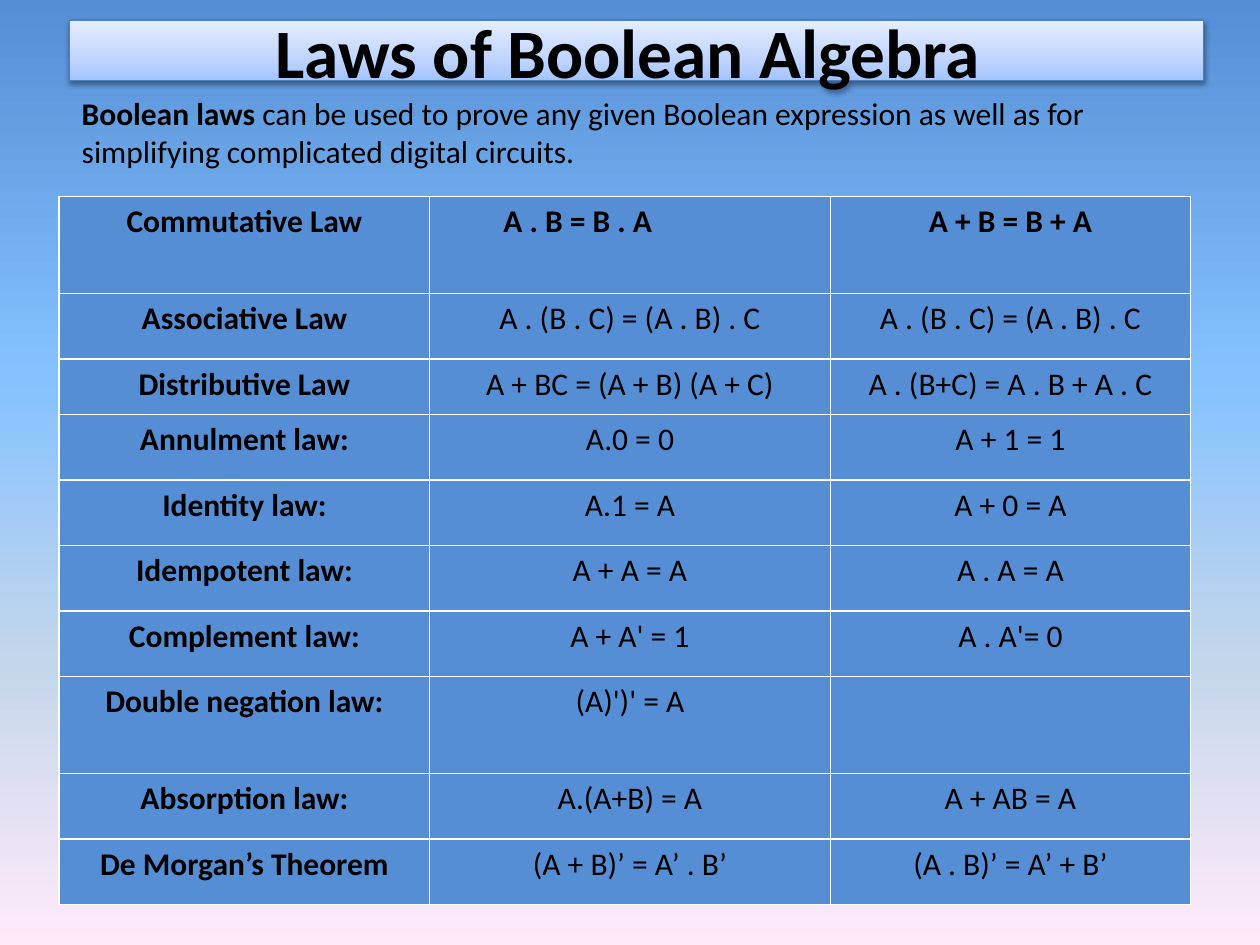
"""Build a slide that tabulates the laws of Boolean algebra."""
from typing import NamedTuple

from lxml.etree import SubElement
from pptx import Presentation
from pptx.dml.color import RGBColor
from pptx.enum.text import MSO_ANCHOR, MSO_AUTO_SIZE, PP_ALIGN
from pptx.oxml.ns import qn
from pptx.util import Inches, Pt

COLORS = {
    "ink": "000000",
    "cell": "558ED5",
    "title_line": "4B7EBC",
}
SKY = [(0, "558ED5"), (40, "85C2FF"), (70, "C4D6EB"), (100, "FFEBFA")]
TITLE_BAND = [(0, "A4C4FF"), (35, "BFD4FF"), (100, "E6EEFF")]
FONT = "Calibri"


class Law(NamedTuple):
    name: str
    first_form: str
    second_form: str
    height: float = 0.52


LAWS = [
    Law("Commutative Law", "A . B = B . A", "A + B = B + A", 0.77),
    Law("Associative Law", "A . (B . C) = (A . B) . C", "A . (B . C) = (A . B) . C"),
    Law("Distributive Law", "A + BC = (A + B) (A + C)", "A . (B+C) = A . B + A . C", 0.44),
    Law("Annulment law:", "A.0 = 0", "A + 1 = 1"),
    Law("Identity law:", "A.1 = A", "A + 0 = A"),
    Law("Idempotent law:", "A + A = A", "A . A = A"),
    Law("Complement law:", "A + A' = 1", "A . A'= 0"),
    Law("Double negation law:", "(A)')' = A", "", 0.77),
    Law("Absorption law:", "A.(A+B) = A", "A + AB = A"),
    Law("De Morgan’s Theorem", "(A + B)’ = A’ . B’", "(A . B)’ = A’ + B’"),
]
COLUMN_WIDTHS = [2.94, 3.18, 2.86]


def add_run(paragraph, text: str, size: float = 18, bold: bool = False) -> None:
    """Append one formatted run to a paragraph."""
    run = paragraph.add_run()
    run.text = text
    run.font.name = FONT
    run.font.size = Pt(size)
    run.font.bold = bold
    run.font.color.rgb = RGBColor.from_string(COLORS["ink"])


def set_gradient(properties, stops: list[tuple[int, str]], angle: int) -> None:
    """Replace the solid fill in a properties element by a linear gradient."""
    solid = properties.find(qn("a:solidFill"))
    gradient = properties.makeelement(qn("a:gradFill"), {"rotWithShape": "1"})
    stop_list = SubElement(gradient, qn("a:gsLst"))
    for position, color in stops:
        stop = SubElement(stop_list, qn("a:gs"), pos=str(position * 1000))
        SubElement(stop, qn("a:srgbClr"), val=color)
    SubElement(gradient, qn("a:lin"), ang=str(angle * 60000), scaled="0")
    properties.replace(solid, gradient)


def add_shadow(properties, blur: float, distance: float, opacity: int) -> None:
    """Add a downward outer shadow to shape properties."""
    effects = SubElement(properties, qn("a:effectLst"))
    shadow = SubElement(
        effects, qn("a:outerShdw"), blurRad=str(Pt(blur)), dist=str(Pt(distance)),
        dir="5400000", rotWithShape="0",
    )
    color = SubElement(shadow, qn("a:srgbClr"), val=COLORS["ink"])
    SubElement(color, qn("a:alpha"), val=str(opacity * 1000))


def format_title(title) -> None:
    """Place, fill and letter the title band."""
    title.left, title.top = Inches(0.55), Inches(0.16)
    title.width, title.height = Inches(9), Inches(0.48)
    title.fill.solid()
    set_gradient(title.element.spPr, TITLE_BAND, 270)
    title.line.color.rgb = RGBColor.from_string(COLORS["title_line"])
    title.line.width = Pt(0.75)
    add_shadow(title.element.spPr, 3.1, 1.6, 38)
    frame = title.text_frame
    frame.auto_size = MSO_AUTO_SIZE.NONE
    frame.vertical_anchor = MSO_ANCHOR.MIDDLE
    frame.margin_right = Inches(0.23)
    heading = frame.paragraphs[0]
    heading.alignment = PP_ALIGN.CENTER
    add_run(heading, "Laws of Boolean Algebra", 39.6, True)


def add_intro(slide) -> None:
    """Add the introductory sentence below the title."""
    intro = slide.shapes.add_textbox(Inches(0.55), Inches(0.7), Inches(8.98), Inches(0.71))
    intro.text_frame.word_wrap = True
    intro.text_frame.auto_size = MSO_AUTO_SIZE.SHAPE_TO_FIT_TEXT
    sentence = intro.text_frame.paragraphs[0]
    add_run(sentence, "Boolean laws ", bold=True)
    add_run(
        sentence,
        "can be used to prove any given Boolean expression as well as for "
        "simplifying complicated digital circuits.",
    )


def add_laws(slide, laws: list[Law]) -> None:
    """Add the table with one law per row."""
    table = slide.shapes.add_table(
        len(laws), len(COLUMN_WIDTHS), Inches(0.47), Inches(1.56),
        Inches(sum(COLUMN_WIDTHS)), Inches(sum(law.height for law in laws)),
    ).table
    table.horz_banding = False
    for column, width in zip(table.columns, COLUMN_WIDTHS):
        column.width = Inches(width)
    for row_index, law in enumerate(laws):
        table.rows[row_index].height = Inches(law.height)
        for column_index, text in enumerate(law[:3]):
            cell = table.cell(row_index, column_index)
            cell.fill.solid()
            cell.fill.fore_color.rgb = RGBColor.from_string(COLORS["cell"])
            if text:
                entry = cell.text_frame.paragraphs[0]
                entry.alignment = PP_ALIGN.CENTER
                add_run(entry, text, bold=row_index == 0 or column_index == 0)
    table.cell(0, 1).margin_right = Inches(0.93)


def main() -> None:
    """Build and save the presentation."""
    presentation = Presentation()
    presentation.slide_width, presentation.slide_height = Inches(10), Inches(7.5)
    slide = presentation.slides.add_slide(presentation.slide_layouts[5])
    slide.background.fill.solid()
    set_gradient(slide.element.find(f".//{qn('p:bgPr')}"), SKY, 90)
    format_title(slide.shapes.title)
    add_laws(slide, LAWS)
    add_intro(slide)
    presentation.save("out.pptx")


if __name__ == "__main__":
    main()
